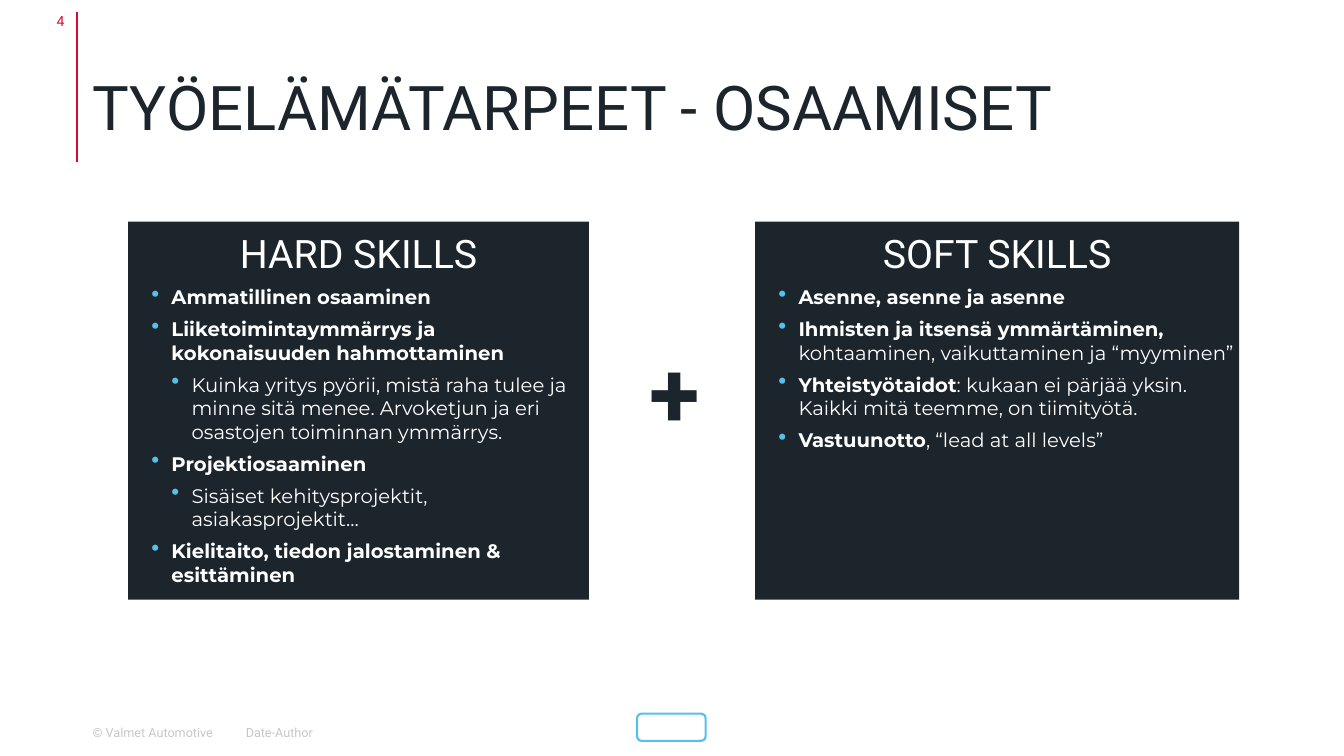
from lxml.etree import SubElement
from pptx import Presentation
from pptx.dml.color import RGBColor as RGB
from pptx.enum.shapes import MSO_CONNECTOR as CONN, MSO_SHAPE as SHAPE
from pptx.enum.text import MSO_ANCHOR as ANCHOR, PP_ALIGN as ALIGN
from pptx.oxml.ns import qn
from pptx.util import Inches, Pt

THEME = {
    "dark": "1C252C", "red": "DB0A33", "blue": "55C0E9", "grey": "C7C7C8", "white": "FFFFFF",
    "head": "Roboto", "body": "Montserrat",
    "title": 44, "plus": 66, "card": 28, "bullet": 14, "number": 10, "footer": 9,
}

prs = Presentation()
prs.slide_width, prs.slide_height = Inches(13.33), Inches(7.5)
COL, ROW = prs.slide_width / 100, prs.slide_height / 100
s = prs.slides.add_slide(prs.slide_layouts[6])


def grid(x, y, w, h):
    return int(x * COL), int(y * ROW), int(w * COL), int(h * ROW)


def style(r, face, size, color, bold=False):
    r.font.name = THEME[face]
    r.font.size = Pt(THEME[size])
    r.font.color.rgb = RGB.from_string(THEME[color])
    r.font.bold = bold


LEFT, FOOT = 6.9, 95.87
TOP, MID = ANCHOR.TOP, ANCHOR.MIDDLE
labels = [
    ("© Valmet Automotive", (LEFT, FOOT, 9.15, 2), "footer", "grey", ALIGN.LEFT, TOP, 0, False),
    ("Date-Author", (17.55, FOOT, 22.8, 2), "footer", "grey", ALIGN.LEFT, MID, 0.1, False),
    ("4", (2.1, 1.6, 2.7, 2.27), "number", "red", ALIGN.RIGHT, MID, 0, False),
    ("TYÖELÄMÄTARPEET - OSAAMISET", (LEFT, 9.07, 86.27, 9.87), "title", "dark", ALIGN.LEFT, TOP, 0, False),
    ("+", (46.96, 44.27, 6.53, 14.8), "plus", "dark", ALIGN.CENTER, TOP, 0, True),
]
for text, place, size, color, align, anchor, inset, bold in labels:
    tf = s.shapes.add_textbox(*grid(*place)).text_frame
    tf.word_wrap = True
    tf.vertical_anchor = anchor
    tf.margin_left = tf.margin_right = Inches(inset)
    tf.margin_top = tf.margin_bottom = 0
    p = tf.paragraphs[0]
    p.text = text
    p.alignment = align
    style(p.runs[0], "head", size, color, bold)

x, bottom, _, top = grid(5.7, 21.47, 0, 1.6)
line = s.shapes.add_connector(CONN.STRAIGHT, x, bottom, x, top)
line.line.color.rgb = RGB.from_string(THEME["red"])
line.line.width = Pt(1.5)
SubElement(line._element.spPr, qn("a:effectLst"))

mark = s.shapes.add_shape(SHAPE.ROUNDED_RECTANGLE, *grid(47.4, 94.4, 5.1, 3.6))
mark.shadow.inherit = False
mark.fill.background()
mark.line.color.rgb = RGB.from_string(THEME["blue"])
mark.line.width = Pt(1.5)

cards = [
    ("HARD SKILLS", 9.53, 34.28, [
        (1, "Ammatillinen osaaminen", ""),
        (1, "Liiketoimintaymmärrys ja kokonaisuuden hahmottaminen", ""),
        (2, "", "Kuinka yritys pyörii, mistä raha tulee ja minne sitä menee. "
                "Arvoketjun ja eri osastojen toiminnan ymmärrys."),
        (1, "Projektiosaaminen", ""),
        (2, "", "Sisäiset kehitysprojektit, asiakasprojektit…"),
        (1, "Kielitaito, tiedon jalostaminen & esittäminen", ""),
    ]),
    ("SOFT SKILLS", 56.19, 36.01, [
        (1, "Asenne, asenne ja asenne", ""),
        (1, "Ihmisten ja itsensä ymmärtäminen, ", "kohtaaminen, vaikuttaminen ja “myyminen”"),
        (1, "Yhteistyötaidot", ": kukaan ei pärjää yksin. Kaikki mitä teemme, on tiimityötä."),
        (1, "Vastuunotto", ", “lead at all levels”"),
    ]),
]
for heading, x, width, bullets in cards:
    sp = s.shapes.add_shape(SHAPE.RECTANGLE, *grid(x, 29.33, width, 50))
    sp.shadow.inherit = False
    sp.fill.solid()
    sp.fill.fore_color.rgb = RGB.from_string(THEME["dark"])
    sp.line.fill.background()
    tf = sp.text_frame
    tf.word_wrap = True
    tf.vertical_anchor = ANCHOR.TOP
    tf.margin_left = tf.margin_right = tf.margin_bottom = Inches(0.04)
    tf.margin_top = Inches(0.08)
    p = tf.paragraphs[0]
    p.text = heading
    p.alignment = ALIGN.CENTER
    style(p.runs[0], "head", "card", "white")
    for level, strong, plain in bullets:
        p = tf.add_paragraph()
        p.level = level
        p.alignment = ALIGN.LEFT
        pPr = p._p.get_or_add_pPr()
        pPr.set("marL", str(Inches(0.19 + 0.2 * level)))
        pPr.set("indent", str(Inches(-0.2)))
        SubElement(SubElement(pPr, qn("a:buClr")), qn("a:srgbClr"), val=THEME["blue"])
        SubElement(pPr, qn("a:buSzPct"), val="120000")
        SubElement(pPr, qn("a:buChar"), char="•")
        p.space_before = Pt(6)
        for text, bold in ((strong, True), (plain, False)):
            if text:
                r = p.add_run()
                r.text = text
                style(r, "body", "bullet", "white", bold)

prs.save("out.pptx")
